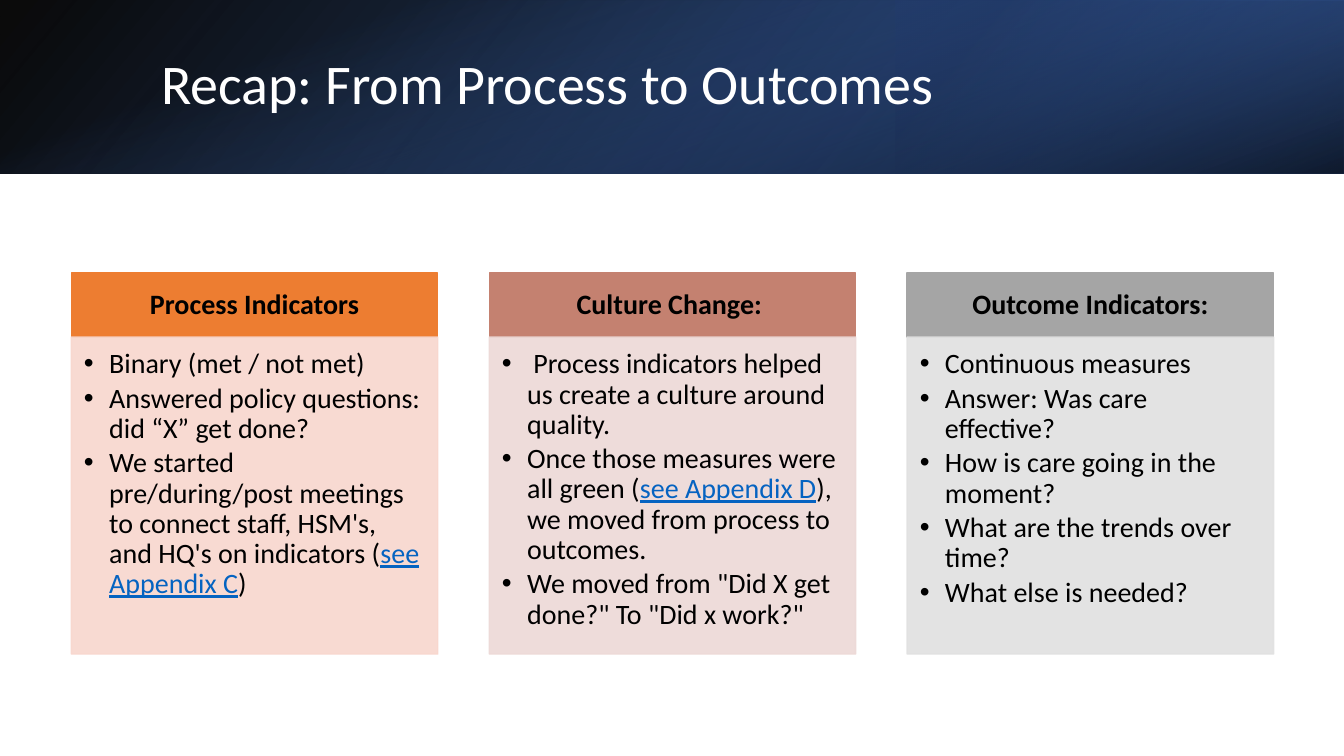
from pptx import Presentation
from pptx.dml.color import RGBColor as RGB
from pptx.enum.shapes import MSO_SHAPE as SHAPE
from pptx.enum.text import MSO_ANCHOR as ANCHOR, MSO_AUTO_SIZE as AUTO, PP_ALIGN as ALIGN
from pptx.oxml.ns import qn
from pptx.util import Pt
from lxml import etree

PX = 9525
COLORS = {
    "black": "000000", "white": "FFFFFF", "navy": "203864", "blue": "2F5597",
    "sky": "4472C4", "link": "0563C1", "orange": "ED7D31", "peach": "F8D7CE",
    "clay": "C48170", "rose": "EDD9D7", "gray": "A5A5A5", "silver": "E1E1E1",
}
W, H, BAND = 1280, 720, 165
LEFT, TOP, PITCH, COL_W, HEAD_H, BODY_H = 68, 260, 398, 349, 61, 302

BANDS = [
    ((0, 0, W, BAND), 0, True, 140, [(0, "black", 96), (100, "blue", 100)]),
    ((853, 0, 427, BAND), 180, True, 320, [(19, "navy", 68), (100, "sky", 79)]),
    ((557, -557, BAND, W), 90, False, 340, [(23, "sky", 0), (99, "black", 74)]),
]
COLUMNS = [
    ("Process Indicators", "orange", "peach", [
        "Binary (met / not met)",
        "Answered policy questions: did “X” get done?",
        "We started pre/during/post meetings to connect staff, HSM's, "
        "and HQ's on indicators (|see Appendix C|)",
    ]),
    ("Culture Change: ", "clay", "rose", [
        " Process indicators helped us create a culture around quality.",
        "Once those measures were all green (|see Appendix D|), "
        "we moved from process to outcomes.",
        "We moved from \"Did X get done?\" To \"Did x work?\"",
    ]),
    ("Outcome Indicators:", "gray", "silver", [
        "Continuous measures",
        "Answer: Was care effective?",
        "How is care going in the moment?",
        "What are the trends over time?",
        "What else is needed?",
    ]),
]
HEAD_FRAME = {"word_wrap": True, "vertical_anchor": ANCHOR.MIDDLE,
              "margin_left": 15 * PX, "margin_right": 15 * PX,
              "margin_top": 9 * PX, "margin_bottom": 9 * PX}
BODY_FRAME = {"word_wrap": True, "vertical_anchor": ANCHOR.TOP,
              "margin_left": 12 * PX, "margin_right": 15 * PX,
              "margin_top": 12 * PX, "margin_bottom": 16 * PX}
HEAD_PARA = {"alignment": ALIGN.CENTER, "line_spacing": 0.9}
BODY_PARA = {"alignment": ALIGN.LEFT, "line_spacing": 0.9, "space_after": Pt(3)}
TITLE_PARA = {"alignment": ALIGN.LEFT, "line_spacing": 0.9}


def apply(target, values):
    for name, value in values.items():
        setattr(target, name, value)


def add_run(p, text, size, color, **font):
    r = p.add_run()
    r.text = text
    apply(r.font, {"name": "Calibri", "size": Pt(size), **font})
    r.font.color.rgb = RGB.from_string(COLORS[color])


prs = Presentation()
prs.slide_width, prs.slide_height = W * PX, H * PX
s = prs.slides.add_slide(prs.slide_layouts[5])

for box, turn, flipped, angle, stops in BANDS:
    sp = s.shapes.add_shape(SHAPE.RECTANGLE, *[v * PX for v in box])
    sp.shadow.inherit = False
    sp.rotation = turn
    if flipped:
        sp.element.spPr.find(qn("a:xfrm")).set("flipH", "1")
    sp.line.fill.background()
    sp.fill.gradient()
    sp.fill.gradient_angle = 360 - angle
    for stop, (pos, color, opacity) in zip(sp.fill.gradient_stops, stops):
        stop.position = pos / 100
        stop.color.rgb = RGB.from_string(COLORS[color])
    for clr, (pos, color, opacity) in zip(sp.element.spPr.iter(qn("a:srgbClr")), stops):
        etree.SubElement(clr, qn("a:alpha")).set("val", str(opacity * 1000))

title = s.shapes.title
s.shapes.element.append(title.element)
apply(title, {"left": 144 * PX, "top": 36 * PX, "width": 1054 * PX, "height": 92 * PX})
tf = title.text_frame
apply(tf, {"word_wrap": True, "auto_size": AUTO.NONE, "vertical_anchor": ANCHOR.MIDDLE})
p = tf.paragraphs[0]
apply(p, TITLE_PARA)
add_run(p, "Recap: From Process to Outcomes", 40, "white")

for i, (heading, head_color, body_color, items) in enumerate(COLUMNS):
    parts = [
        (TOP, HEAD_H, head_color, 100, HEAD_FRAME, HEAD_PARA, [heading]),
        (TOP + HEAD_H, BODY_H, body_color, 90, BODY_FRAME, BODY_PARA, items),
    ]
    for top, height, color, opacity, frame, para, lines in parts:
        sp = s.shapes.add_shape(SHAPE.RECTANGLE, (LEFT + i * PITCH) * PX, top * PX,
                                COL_W * PX, height * PX)
        sp.shadow.inherit = False
        sp.fill.solid()
        sp.line.width = Pt(1)
        for paint in (sp.fill, sp.line.fill):
            paint.solid()
            paint.fore_color.rgb = RGB.from_string(COLORS[color])
        if opacity < 100:
            for clr in sp.element.spPr.iter(qn("a:srgbClr")):
                etree.SubElement(clr, qn("a:alpha")).set("val", str(opacity * 1000))
        tf = sp.text_frame
        apply(tf, frame)
        for n, line in enumerate(lines):
            p = tf.add_paragraph() if n else tf.paragraphs[0]
            apply(p, para)
            if lines is items:
                pPr = p._p.get_or_add_pPr()
                pPr.set("marL", str(24 * PX))
                pPr.set("indent", str(-24 * PX))
                etree.SubElement(pPr, qn("a:buFont")).set("typeface", "Arial")
                etree.SubElement(pPr, qn("a:buChar")).set("char", "•")
            for k, text in enumerate(line.split("|")):
                linked = k % 2 == 1
                add_run(p, text, 20, "link" if linked else "black",
                        bold=lines is not items, underline=linked)

prs.save("out.pptx")
